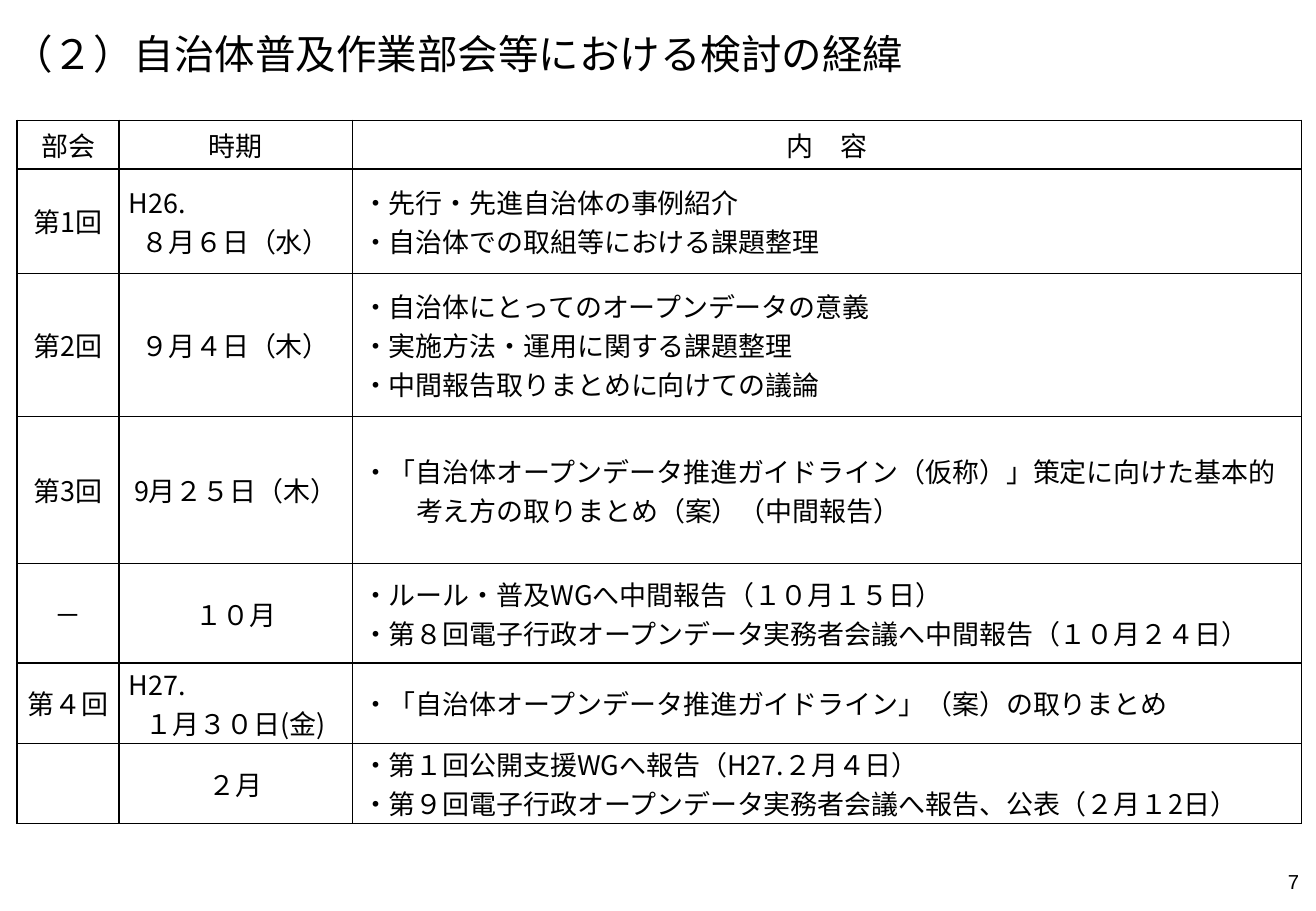
from dataclasses import dataclass

from pptx import Presentation
from pptx.dml.color import RGBColor
from pptx.enum.text import MSO_ANCHOR as Anchor, MSO_AUTO_SIZE as AutoSize, PP_ALIGN as Align
from pptx.oxml import parse_xml
from pptx.oxml.ns import nsdecls, qn
from pptx.util import Inches, Pt


@dataclass(frozen=True)
class Theme:
    """Colours, fonts and type sizes of the deck."""
    ink: str = "000000"
    japanese: str = "Noto Sans CJK JP"
    latin: str = "Arial"
    title: int = 24
    body: int = 16
    number: int = 12
    rule: float = 1


THEME = Theme()
TITLE = "（２）自治体普及作業部会等における検討の経緯"
COLUMNS = [0.84, 1.92, 7.81]
ROWS = [
    (0.4, ["部会"], ["時期"], ["内　容"]),
    (0.86, ["第1回"], ["H26.", "８月６日（水）"],
     ["・先行・先進自治体の事例紹介", "・自治体での取組等における課題整理"]),
    (1.18, ["第2回"], ["９月４日（木）"],
     ["・自治体にとってのオープンデータの意義", "・実施方法・運用に関する課題整理",
      "・中間報告取りまとめに向けての議論"]),
    (1.21, ["第3回"], ["9月２５日（木）"],
     ["・「自治体オープンデータ推進ガイドライン（仮称）」策定に向けた基本的",
      "考え方の取りまとめ（案）（中間報告）"]),
    (0.82, ["－"], ["１０月"],
     ["・ルール・普及WGへ中間報告（１０月１５日）",
      "・第８回電子行政オープンデータ実務者会議へ中間報告（１０月２４日）"]),
    (0.66, ["第４回"], ["H27.", "１月３０日(金)"],
     ["・「自治体オープンデータ推進ガイドライン」（案）の取りまとめ"]),
    (0.66, [], ["２月"],
     ["・第１回公開支援WGへ報告（H27.２月４日）",
      "・第９回電子行政オープンデータ実務者会議へ報告、公表（２月１2日）"]),
]


def write(para, text, size, face, align=Align.LEFT):
    """Fill a paragraph and set its font for Latin and Japanese letters."""
    para.text = text
    para.alignment = align
    font = para.font
    font.size = Pt(size)
    font.name = face
    font.color.rgb = RGBColor.from_string(THEME.ink)
    latin = para.font._element.find(qn("a:latin"))
    latin.addnext(parse_xml(f'<a:ea {nsdecls("a")} typeface="{face}"/>'))


def outline(cell):
    """Draw a thin rule on all four sides of a cell."""
    properties = cell._tc.get_or_add_tcPr()
    for index, side in enumerate(["lnL", "lnR", "lnT", "lnB"]):
        properties.insert(index, parse_xml(
            f'<a:{side} {nsdecls("a")} w="{Pt(THEME.rule)}"><a:solidFill>'
            f'<a:srgbClr val="{THEME.ink}"/></a:solidFill></a:{side}>'))


def fill_cell(cell, lines, is_list):
    """Set a cell's frame and write its lines, indenting continued list items."""
    cell.fill.background()
    outline(cell)
    cell.vertical_anchor = Anchor.MIDDLE
    cell.margin_left = cell.margin_right = Inches(0.08)
    cell.margin_top = cell.margin_bottom = 0
    frame = cell.text_frame
    for index, line in enumerate(lines):
        para = frame.add_paragraph() if index else frame.paragraphs[0]
        left = is_list or line.endswith(".")
        write(para, line, THEME.body, THEME.japanese, Align.LEFT if left else Align.CENTER)
        if is_list and not line.startswith("・"):
            para._p.get_or_add_pPr().set("marL", str(Pt(2 * THEME.body)))


def add_title(page, left, top, width, height):
    """Place the heading in the title placeholder."""
    title = page.shapes.title
    title.left, title.top, title.width, title.height = map(Inches, (left, top, width, height))
    frame = title.text_frame
    frame.auto_size = AutoSize.NONE
    frame.vertical_anchor = Anchor.MIDDLE
    write(frame.paragraphs[0], TITLE, THEME.title, THEME.japanese)


def add_history(page, left, top):
    """Place the table of meetings, dates and topics."""
    width, height = sum(COLUMNS), sum(row[0] for row in ROWS)
    table = page.shapes.add_table(len(ROWS), len(COLUMNS), *map(Inches, (left, top, width, height))).table
    table.first_row = table.horz_banding = False
    for column, size in zip(table.columns, COLUMNS):
        column.width = Inches(size)
    for r, (size, *cells) in enumerate(ROWS):
        table.rows[r].height = Inches(size)
        for c, lines in enumerate(cells):
            fill_cell(table.cell(r, c), lines, r > 0 and c == 2)


def add_number(page, left, top, width, height):
    """Place the page number at the lower right."""
    box = page.shapes.add_textbox(*map(Inches, (left, top, width, height)))
    frame = box.text_frame
    frame.word_wrap = True
    frame.vertical_anchor = Anchor.MIDDLE
    write(frame.paragraphs[0], "7", THEME.number, THEME.latin, Align.RIGHT)


def main():
    """Build the slide and save it."""
    deck = Presentation()
    deck.slide_width, deck.slide_height = Inches(10.83), Inches(7.5)
    page = deck.slides.add_slide(deck.slide_layouts[5])
    add_title(page, 0, 0.18, 10.83, 0.51)
    add_history(page, 0.14, 0.99)
    add_number(page, 8.26, 7.06, 2.53, 0.4)
    deck.save("out.pptx")


if __name__ == "__main__":
    main()
